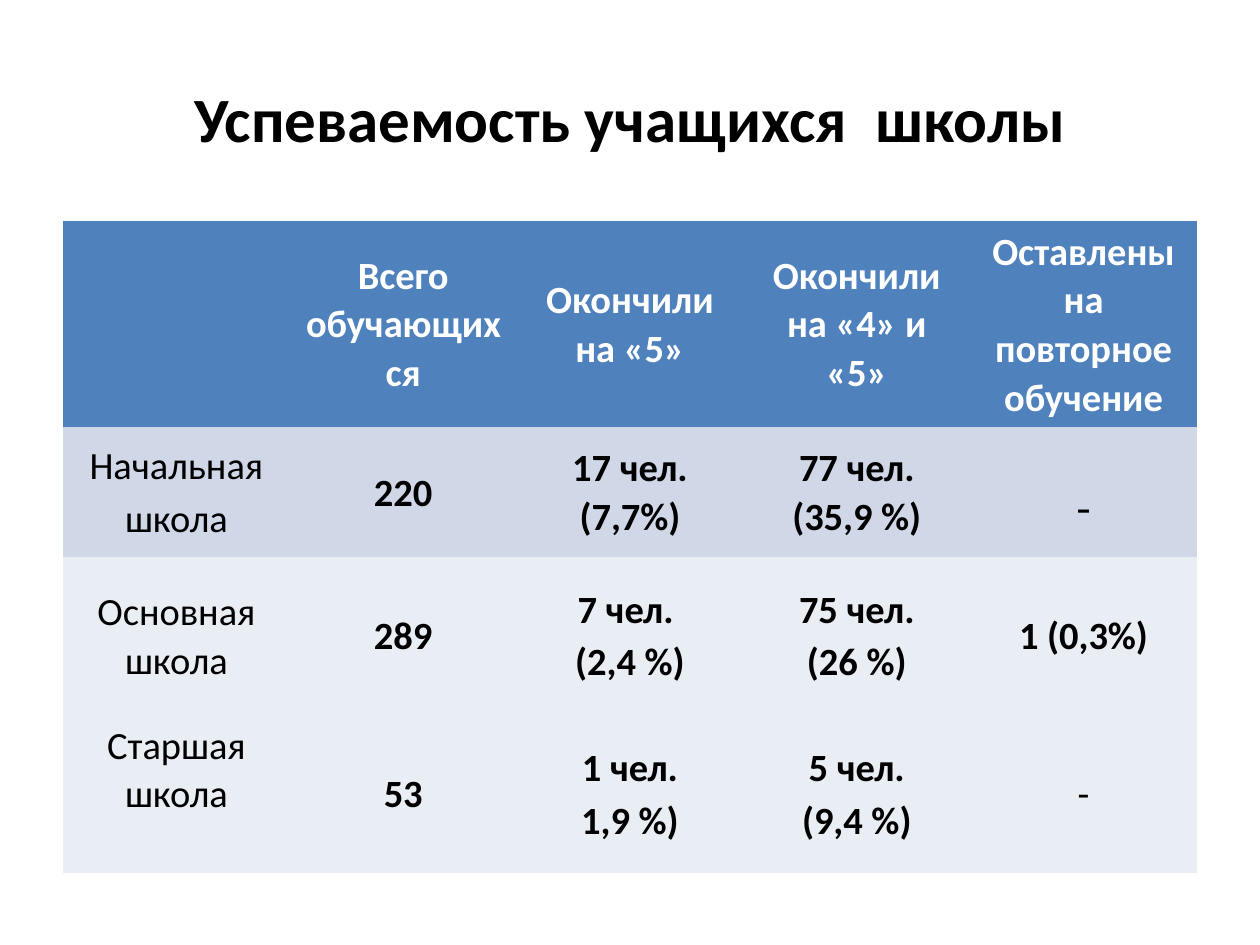
from dataclasses import dataclass

from pptx import Presentation
from pptx.dml.color import RGBColor as Rgb
from pptx.enum.text import MSO_ANCHOR as Anchor, PP_ALIGN as Align
from pptx.oxml.ns import qn
from pptx.util import Inches, Pt


@dataclass(frozen=True)
class Theme:
    font: str = "Calibri"
    dash_font: str = "Times New Roman"
    title_size: int = 36
    cell_size: int = 22
    dash_size: int = 24
    ink: str = "000000"
    header_ink: str = "FFFFFF"
    row_fills: tuple = ("4F81BD", "D0D8E8", "E9EDF4", "E9EDF4")
    plain_table: str = "{2D5ABB26-0587-4C30-8999-92F81FD0307C}"


class SlideBuilder:
    """Adds styled elements to one slide."""

    def __init__(self, slide, theme):
        self.slide = slide
        self.theme = theme

    def style_text(self, frame, size, color, bold, font=None):
        for para in frame.paragraphs:
            para.alignment = Align.CENTER
            for span in para.runs:
                span.font.name = font or self.theme.font
                span.font.size = Pt(size)
                span.font.bold = bold
                span.font.color.rgb = Rgb.from_string(color)

    def title(self, text, left, top, width, height):
        box = self.slide.shapes.add_textbox(
            Inches(left), Inches(top), Inches(width), Inches(height))
        frame = box.text_frame
        frame.word_wrap = True
        frame.vertical_anchor = Anchor.MIDDLE
        frame.text = text
        self.style_text(frame, self.theme.title_size, self.theme.ink, True)

    def cell(self, cell, text, fill, color, bold):
        cell.fill.solid()
        cell.fill.fore_color.rgb = Rgb.from_string(fill)
        cell.vertical_anchor = Anchor.MIDDLE
        frame = cell.text_frame
        frame.text = text
        self.style_text(frame, self.theme.cell_size, color, bold)
        for index, para in enumerate(frame.paragraphs):
            para.line_spacing = 1.12 if index else 1.04

    def table(self, rows, left, top, column_width, row_heights):
        frame = self.slide.shapes.add_table(
            len(rows), len(rows[0]), Inches(left), Inches(top),
            Inches(column_width * len(rows[0])), Inches(sum(row_heights)))
        table = frame.table
        table._tbl.tblPr.find(qn("a:tableStyleId")).text = self.theme.plain_table
        for column in table.columns:
            column.width = Inches(column_width)
        for row_index, (texts, height) in enumerate(zip(rows, row_heights)):
            table.rows[row_index].height = Inches(height)
            is_header = row_index == 0
            color = self.theme.header_ink if is_header else self.theme.ink
            for column_index, text in enumerate(texts):
                bold = is_header or (column_index > 0 and text != "-")
                self.cell(table.cell(row_index, column_index), text,
                          self.theme.row_fills[row_index], color, bold)
        return table

    def serif_dash(self, cell):
        cell.margin_top = Inches(0.35)
        self.style_text(cell.text_frame, self.theme.dash_size, self.theme.ink,
                        False, self.theme.dash_font)
        cell.text_frame.paragraphs[0].line_spacing = 0.74


def main():
    deck = Presentation()
    deck.slide_width, deck.slide_height = Inches(10), Inches(7.5)
    page = SlideBuilder(deck.slides.add_slide(deck.slide_layouts[6]), Theme())
    page.title("Успеваемость учащихся  школы", 0.5, 0.28, 9, 1.3)
    results = [
        ["", "Всего обучающихся", "Окончили на «5»", "Окончили на «4» и «5»",
         "Оставлены на повторное обучение"],
        ["Начальная\nшкола", "220", "17 чел. (7,7%)", "77 чел. (35,9 %)", "-"],
        ["Основная школа", "289", "7 чел. \n(2,4 %)", "75 чел.\n(26 %)", "1 (0,3%)"],
        ["Старшая школа", "53", "1 чел.\n1,9 %)", "5 чел.\n(9,4 %)", "-"],
    ]
    table = page.table(results, 0.5, 1.75, 1.8, [1.64, 1.03, 1.25, 1.26])
    page.serif_dash(table.cell(1, 4))
    table.cell(3, 0).margin_bottom = Inches(0.45)
    deck.save("out.pptx")


if __name__ == "__main__":
    main()
